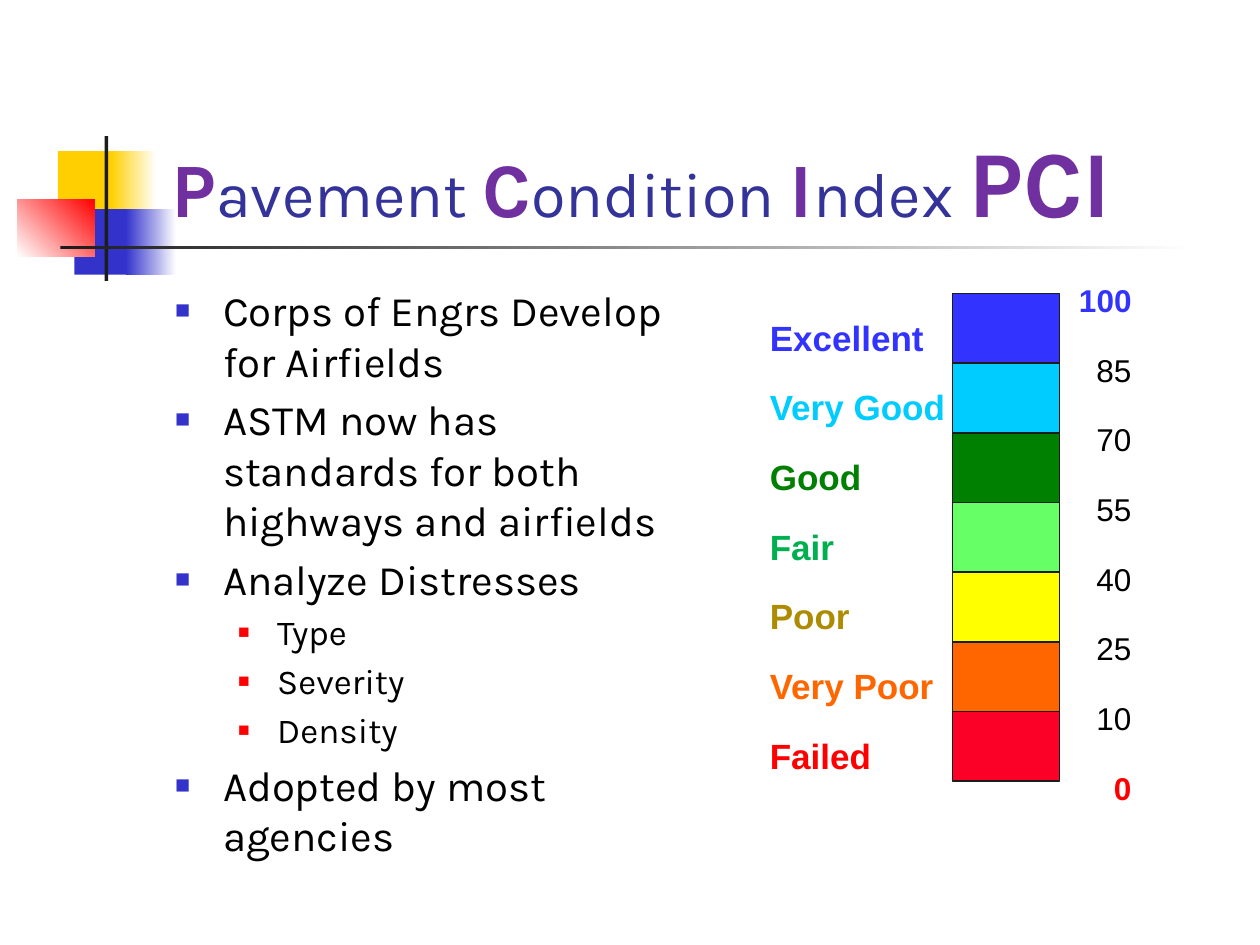
from dataclasses import dataclass

from lxml import etree
from pptx import Presentation
from pptx.dml.color import RGBColor
from pptx.enum import shapes, text
from pptx.oxml import ns
from pptx.util import Inches, Pt


@dataclass(frozen=True)
class Theme:
    """Colours, fonts and type sizes of the slide."""
    gold: str = "FFCF01"
    blue: str = "3333CC"
    red: str = "FF0000"
    white: str = "FFFFFF"
    dark: str = "1C1C1C"
    black: str = "000000"
    navy: str = "333399"
    plum: str = "7030A0"
    face: str = "Karla"
    sans: str = "Arial"
    word: int = 36
    cap: int = 44
    acro: int = 54
    item: int = 24
    sub: int = 20
    mark: int = 18


@dataclass(frozen=True)
class Box:
    """A rectangle in inches with one colour, or two for a gradient."""
    left: float
    top: float
    width: float
    height: float
    fill: str
    end: str = ""
    angle: int = 0


@dataclass(frozen=True)
class Grade:
    """A rating band: its name, label width, label colour and fill."""
    name: str
    width: float
    ink: str
    fill: str


@dataclass(frozen=True)
class Score:
    """A limit on the scale."""
    value: str
    width: float = 0.5
    ink: str = "000000"
    bold: bool = False


@dataclass(frozen=True)
class Level:
    """Indents, bullet and type size of a list level."""
    margin: float
    hang: float
    tint: str
    ratio: int
    size: int


T = Theme()
DECOR = [
    Box(0.46, 1.2, 0.48, 0.52, T.gold),
    Box(0.88, 1.2, 0.36, 0.52, T.gold, T.white),
    Box(0.59, 1.66, 0.46, 0.52, T.blue),
    Box(1, 1.66, 0.4, 0.52, T.blue, T.white),
    Box(0.14, 1.58, 0.61, 0.46, T.white, T.red, 45),
    Box(0.83, 1.08, 0.03, 1.15, T.dark),
    Box(0.48, 1.95, 9, 0.03, T.dark, T.white),
]
GRADES = [
    Grade("Excellent", 1.46, "3333FF", "3333FF"),
    Grade("Very Good", 1.63, "00CCFF", "00CCFF"),
    Grade("Good", 0.96, "008000", "008000"),
    Grade("Fair", 0.74, "00B050", "66FF66"),
    Grade("Poor", 0.87, "AD8C01", "FFFF00"),
    Grade("Very Poor", 1.54, "FF6600", "FF6600"),
    Grade("Failed", 1.04, "FF0000", "FC0128"),
]
SCORES = [
    Score("100", 0.65, "3333FF", True),
    *[Score(str(n)) for n in range(85, 9, -15)],
    Score("0", 0.37, T.red, True),
]
TITLE = [("P", T.cap), ("avement ", T.word), ("C", T.cap), ("ondition ", T.word),
         ("I", T.cap), ("ndex ", T.word), ("PCI", T.acro)]
LEVELS = [Level(0.38, 0.38, T.blue, 60, T.item), Level(0.81, 0.31, T.red, 55, T.sub)]
ITEMS = [
    ("Corps of Engrs Develop for Airfields", 0),
    ("ASTM now has standards for both highways and airfields", 0),
    ("Analyze Distresses", 0),
    ("Type", 1),
    ("Severity", 1),
    ("Density", 1),
    ("Adopted by most agencies", 0),
]
STEP = 3.87 / len(GRADES)


def style(font, face: str, size: int, ink: str, bold: bool = False) -> None:
    """Set face, size, colour and weight of a font."""
    font.name, font.size, font.bold = face, Pt(size), bold
    font.color.rgb = RGBColor.from_string(ink)


def place(shape, left: float, top: float, width: float, height: float) -> None:
    """Move and size a shape."""
    shape.left, shape.top = Inches(left), Inches(top)
    shape.width, shape.height = Inches(width), Inches(height)


def draw(tree, box: Box, edge: str = "") -> None:
    """Draw a rectangle, outlined if an edge colour is given."""
    rect = tree.add_shape(shapes.MSO_SHAPE.RECTANGLE, Inches(box.left), Inches(box.top),
                          Inches(box.width), Inches(box.height))
    rect.shadow.inherit = False
    if box.end:
        rect.fill.gradient()
        rect.fill.gradient_angle = box.angle
        for stop, tone in zip(rect.fill.gradient_stops, (box.fill, box.end)):
            stop.color.rgb = RGBColor.from_string(tone)
    else:
        rect.fill.solid()
        rect.fill.fore_color.rgb = RGBColor.from_string(box.fill)
    if edge:
        rect.line.color.rgb = RGBColor.from_string(edge)
        rect.line.width = Pt(1)
    else:
        rect.line.fill.background()


def label(tree, words: str, left: float, top: float, width: float, height: float,
          size: int, ink: str, bold: bool, align) -> None:
    """Add a one-line text box."""
    frame = tree.add_textbox(Inches(left), Inches(top), Inches(width), Inches(height)).text_frame
    frame.word_wrap = False
    frame.auto_size = text.MSO_AUTO_SIZE.SHAPE_TO_FIT_TEXT
    frame.margin_left = frame.margin_right = Inches(0.11)
    frame.margin_top = frame.margin_bottom = Inches(0.06)
    para = frame.paragraphs[0]
    para.text, para.alignment = words, align
    style(para.font, T.sans, size, ink, bold)


def bullet(para, level: Level) -> None:
    """Give a paragraph a square bullet and a hanging indent."""
    props = para._p.get_or_add_pPr()
    props.set("marL", str(Inches(level.margin)))
    props.set("indent", str(-Inches(level.hang)))
    tint = etree.SubElement(props, ns.qn("a:buClr"))
    etree.SubElement(tint, ns.qn("a:srgbClr"), val=level.tint)
    etree.SubElement(props, ns.qn("a:buSzPct"), val=str(level.ratio * 1000))
    etree.SubElement(props, ns.qn("a:buFont"), typeface=T.sans)
    etree.SubElement(props, ns.qn("a:buChar"), char="■")


def head(shape) -> None:
    """Fill the title with its large initials."""
    place(shape, 1.26, 0.68, 8.52, 1.25)
    frame = shape.text_frame
    frame.auto_size = text.MSO_AUTO_SIZE.NONE
    frame.vertical_anchor = text.MSO_ANCHOR.BOTTOM
    para = frame.paragraphs[0]
    para.alignment = text.PP_ALIGN.LEFT
    for words, size in TITLE:
        run = para.add_run()
        run.text = words
        big = size > T.word
        style(run.font, T.face, size, T.plum if big else T.navy, big)


def body(shape) -> None:
    """Fill the bulleted list."""
    place(shape, 1.29, 2.21, 4.17, 4.5)
    frame = shape.text_frame
    frame.auto_size = text.MSO_AUTO_SIZE.NONE
    for i, (words, depth) in enumerate(ITEMS):
        para = frame.add_paragraph() if i else frame.paragraphs[0]
        level = LEVELS[depth]
        para.text, para.level = words, depth
        bullet(para, level)
        para.space_before = Pt(level.size * 0.2)
        style(para.font, T.face, level.size, T.black)


def scale(tree) -> None:
    """Draw the rating bands with their names and limits."""
    for i, grade in enumerate(GRADES):
        draw(tree, Box(7.56, 2.33 + i * STEP, 0.85, STEP, grade.fill), T.dark)
        label(tree, grade.name, 6, 2.45 + i * STEP, grade.width, 0.45,
              T.sub, grade.ink, True, text.PP_ALIGN.LEFT)
    for i, score in enumerate(SCORES):
        label(tree, score.value, 9.09 - score.width, 2.17 + i * STEP, score.width, 0.41,
              T.mark, score.ink, score.bold, text.PP_ALIGN.RIGHT)


def main() -> None:
    """Build and save the slide."""
    deck = Presentation()
    deck.slide_width, deck.slide_height = Inches(10), Inches(7.5)
    slide = deck.slides.add_slide(deck.slide_layouts[1])
    for box in DECOR:
        draw(slide.shapes, box)
    scale(slide.shapes.add_group_shape().shapes)
    head(slide.shapes.title)
    body(slide.placeholders[1])
    deck.save("out.pptx")


if __name__ == "__main__":
    main()
